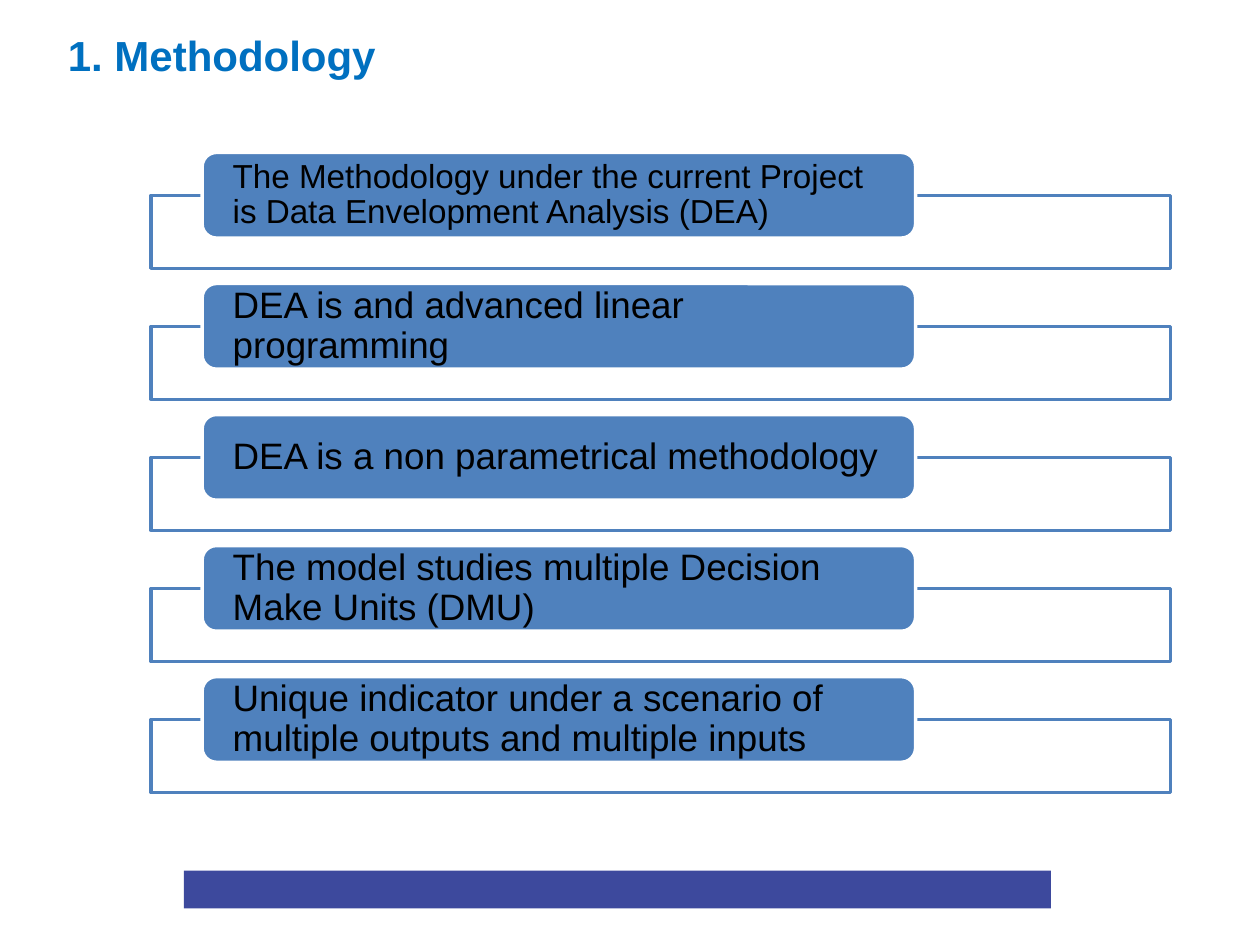
from dataclasses import dataclass

from pptx import Presentation
from pptx.dml.color import RGBColor
from pptx.enum.shapes import MSO_SHAPE
from pptx.enum.text import MSO_ANCHOR, PP_ALIGN
from pptx.util import Inches, Pt

TITLE = "1. Methodology"
STATEMENTS = [
    ("The Methodology under the current Project is Data Envelopment Analysis (DEA)", 19),
    ("DEA is and advanced linear programming", 21),
    ("DEA is a non parametrical methodology", 21),
    ("The model studies multiple Decision Make Units (DMU)", 21),
    ("Unique indicator under a scenario of multiple outputs and multiple inputs", 21),
]


@dataclass(frozen=True)
class Theme:
    font: str = "Arial"
    title_size: int = 24
    title: RGBColor = RGBColor(0x00, 0x70, 0xC0)
    text: RGBColor = RGBColor(0x00, 0x00, 0x00)
    accent: RGBColor = RGBColor(0x4F, 0x81, 0xBD)
    paper: RGBColor = RGBColor(0xFF, 0xFF, 0xFF)
    footer: RGBColor = RGBColor(0x3D, 0x49, 0x9D)
    line_width: int = 2


THEME = Theme()
SLIDE_WIDTH, SLIDE_HEIGHT = 10, 7.5
FIRST_ROW, ROW_PITCH = 1.21, 1.04
FRAME_LEFT, FRAME_WIDTH, FRAME_HEIGHT = 1.2, 8.09, 0.58
LABEL_HEIGHT = 0.68
LABEL_LEFT = FRAME_LEFT + FRAME_WIDTH * 0.05
LABEL_WIDTH = FRAME_WIDTH * 0.7


def add_box(page, kind, place, fill, line=None):
    box = page.shapes.add_shape(kind, *map(Inches, place))
    box.shadow.inherit = False
    box.fill.solid()
    box.fill.fore_color.rgb = fill
    if line is None:
        box.line.fill.background()
    else:
        box.line.color.rgb = line
        box.line.width = Pt(THEME.line_width)
    return box


def write(box, text, size, color, side_margin, align, bold=False, spacing=1.0):
    frame = box.text_frame
    frame_format = {
        "word_wrap": True,
        "vertical_anchor": MSO_ANCHOR.MIDDLE,
        "margin_left": Inches(side_margin),
        "margin_right": Inches(side_margin),
        "margin_top": 0,
        "margin_bottom": 0,
    }
    for name, value in frame_format.items():
        setattr(frame, name, value)
    para = frame.paragraphs[0]
    para.alignment = align
    para.line_spacing = spacing
    span = para.add_run()
    span.text = text
    for name, value in {"name": THEME.font, "size": Pt(size), "bold": bold}.items():
        setattr(span.font, name, value)
    span.font.color.rgb = color


def add_statement(page, row, text, size):
    top = FIRST_ROW + row * ROW_PITCH
    middle = top + LABEL_HEIGHT / 2
    add_box(page, MSO_SHAPE.RECTANGLE,
            (FRAME_LEFT, middle, FRAME_WIDTH, FRAME_HEIGHT), THEME.paper, THEME.accent)
    label = add_box(page, MSO_SHAPE.ROUNDED_RECTANGLE,
                    (LABEL_LEFT, top, LABEL_WIDTH, LABEL_HEIGHT), THEME.accent, THEME.paper)
    write(label, text, size, THEME.text, 0.21, PP_ALIGN.LEFT, spacing=0.9)


def main():
    deck = Presentation()
    deck.slide_width, deck.slide_height = Inches(SLIDE_WIDTH), Inches(SLIDE_HEIGHT)
    page = deck.slides.add_slide(deck.slide_layouts[6])

    add_box(page, MSO_SHAPE.RECTANGLE, (1.46, 6.91, 6.88, 0.3), THEME.footer)
    title = page.shapes.add_textbox(*map(Inches, (0, 0.08, 3.52, 0.71)))
    write(title, TITLE, THEME.title_size, THEME.title, 0.1, PP_ALIGN.CENTER, bold=True)
    for row, (text, size) in enumerate(STATEMENTS):
        add_statement(page, row, text, size)

    deck.save("out.pptx")


if __name__ == "__main__":
    main()
